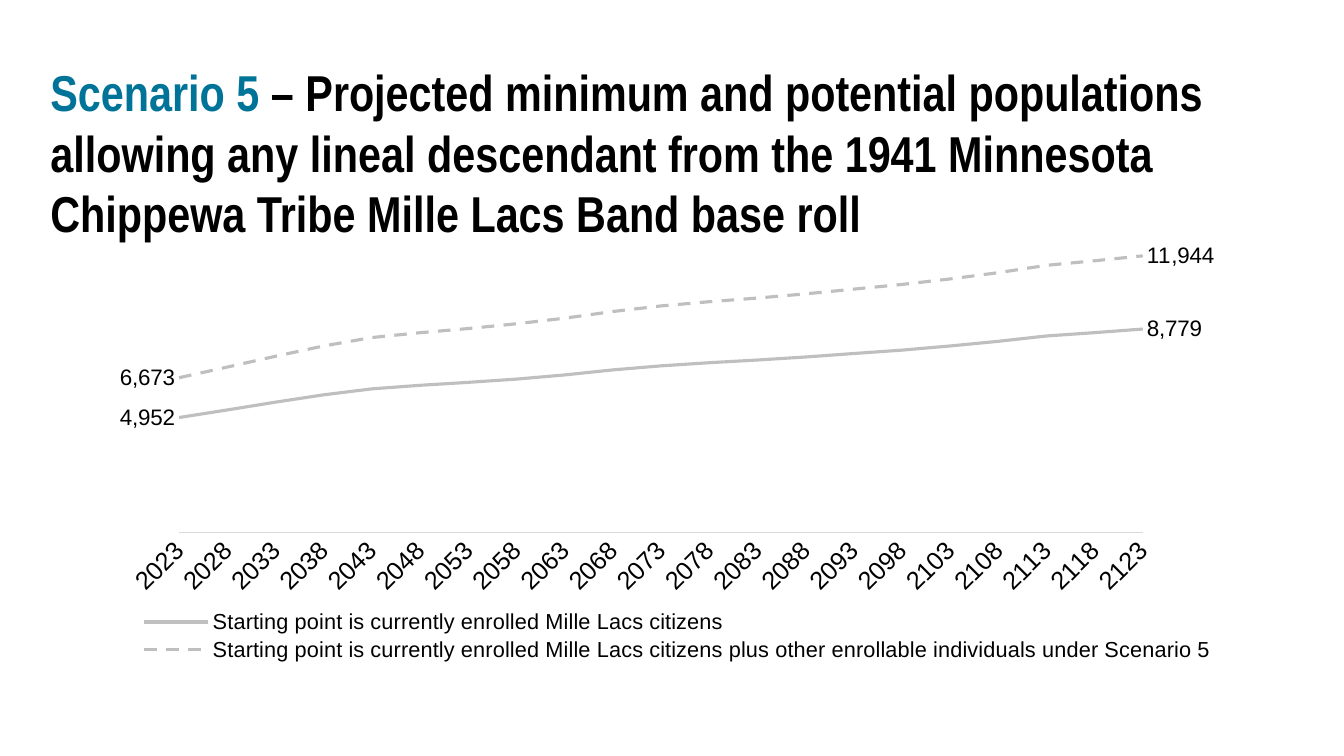
from lxml.etree import SubElement
from pptx import Presentation
from pptx.chart.data import CategoryChartData
from pptx.dml.color import RGBColor
from pptx.enum.chart import XL_CHART_TYPE, XL_LABEL_POSITION, XL_LEGEND_POSITION, XL_TICK_MARK
from pptx.enum.dml import MSO_LINE
from pptx.enum.text import MSO_ANCHOR, MSO_AUTO_SIZE, PP_ALIGN
from pptx.oxml.ns import qn
from pptx.util import Inches, Pt

TEAL = RGBColor(0x00, 0x73, 0x98)
BLACK = RGBColor(0x00, 0x00, 0x00)
LINE_GRAY = RGBColor(0xBF, 0xBF, 0xBF)
AXIS_GRAY = RGBColor(0xD9, 0xD9, 0xD9)

TITLE = [
    ("Scenario 5 ", TEAL),
    ("– Projected minimum and potential populations allowing any lineal descendant "
     "from the 1941 Minnesota Chippewa Tribe Mille Lacs Band base roll", BLACK),
]
YEARS = [str(year) for year in range(2023, 2124, 5)]
# name, dash style, population per year
POPULATIONS = [
    ("Starting point is currently enrolled Mille Lacs citizens", MSO_LINE.SOLID,
     [4952, 5280, 5616, 5934, 6192, 6346, 6472, 6613, 6794, 7011, 7187,
      7322, 7439, 7570, 7720, 7867, 8046, 8247, 8479, 8623, 8779]),
    ("Starting point is currently enrolled Mille Lacs citizens plus other "
     "enrollable individuals under Scenario 5", MSO_LINE.DASH,
     [6673, 7133, 7600, 8047, 8413, 8620, 8800, 9006, 9248, 9536, 9778,
      9960, 10118, 10300, 10505, 10706, 10945, 11216, 11534, 11732, 11944]),
]
END_LABELS = [(0, XL_LABEL_POSITION.LEFT), (len(YEARS) - 1, XL_LABEL_POSITION.RIGHT)]


def set_font(font, size, name="Arial", color=BLACK, bold=False):
    font.size, font.name, font.bold = Pt(size), name, bold
    font.color.rgb = color


def set_layout(element, index, x, y, w, h, inner=False):
    """Place a chart part by fractions of the chart area."""
    for old in element.findall(qn("c:layout")):
        element.remove(old)
    layout = SubElement(element, qn("c:layout"))
    element.insert(index, layout)
    manual = SubElement(layout, qn("c:manualLayout"))
    settings = [("layoutTarget", "inner")] if inner else []
    settings += [("xMode", "edge"), ("yMode", "edge"), ("x", x), ("y", y), ("w", w), ("h", h)]
    for tag, value in settings:
        SubElement(manual, qn(f"c:{tag}")).set("val", str(value))


def start_lines_on_axis(value_axis):
    """Let the first and last points sit on the plot's edges."""
    element = value_axis._element
    for old in element.findall(qn("c:crossBetween")):
        element.remove(old)
    cross_between = SubElement(element, qn("c:crossBetween"))
    cross_between.set("val", "midCat")
    element.find(qn("c:crosses")).addnext(cross_between)


def add_title(s):
    title = s.shapes.title
    title.left, title.top = Inches(0.5), Inches(1.84)
    title.width, title.height = Inches(12.93), Inches(0.57)
    tf = title.text_frame
    tf.margin_left = tf.margin_top = tf.margin_right = tf.margin_bottom = 0
    tf.vertical_anchor = MSO_ANCHOR.BOTTOM
    tf.word_wrap = True
    tf.auto_size = MSO_AUTO_SIZE.NONE
    p = tf.paragraphs[0]
    p.alignment = PP_ALIGN.LEFT
    for text, color in TITLE:
        r = p.add_run()
        r.text = text
        set_font(r.font, 36, "Arial Narrow", color, bold=True)


def add_population_chart(s):
    data = CategoryChartData(number_format="#,##0")
    data.categories = YEARS
    for name, _, values in POPULATIONS:
        data.add_series(name, values)
    chart = s.shapes.add_chart(XL_CHART_TYPE.LINE, Inches(0.98), Inches(2.22),
                               Inches(11.38), Inches(4.37), data).chart
    chart.has_title = False
    set_font(chart.font, 16)
    plot = chart.plots[0]
    plot.vary_by_categories = False
    set_layout(chart._chartSpace.chart.plotArea, 0, 0.07, 0.07, 0.84, 0.63, inner=True)

    for series, (_, dash, _) in zip(plot.series, POPULATIONS):
        series.smooth = False
        line = series.format.line
        line.color.rgb = LINE_GRAY
        line.width = Pt(2.25)
        line.dash_style = dash
        for index, position in END_LABELS:
            label = series.points[index].data_label
            set_font(label.font, 16)
            label.position = position

    years = chart.category_axis
    years.major_tick_mark = years.minor_tick_mark = XL_TICK_MARK.NONE
    years.format.line.color.rgb = AXIS_GRAY
    years.format.line.width = Pt(0.75)
    set_font(years.tick_labels.font, 18)
    years._element.find(qn("c:txPr")).find(qn("a:bodyPr")).set("rot", "-2700000")

    people = chart.value_axis
    people.minimum_scale, people.maximum_scale = 0, 12000
    people.has_major_gridlines = False
    people.visible = False
    start_lines_on_axis(people)

    chart.has_legend = True
    legend = chart.legend
    legend.position = XL_LEGEND_POSITION.BOTTOM
    legend.include_in_layout = False
    set_font(legend.font, 15.5)
    set_layout(legend._element, 1, 0.03, 0.87, 0.95, 0.13)


def main():
    prs = Presentation()
    prs.slide_width, prs.slide_height = Inches(13.33), Inches(7.5)
    s = prs.slides.add_slide(prs.slide_layouts[5])
    add_title(s)
    add_population_chart(s)
    prs.save("out.pptx")


if __name__ == "__main__":
    main()
